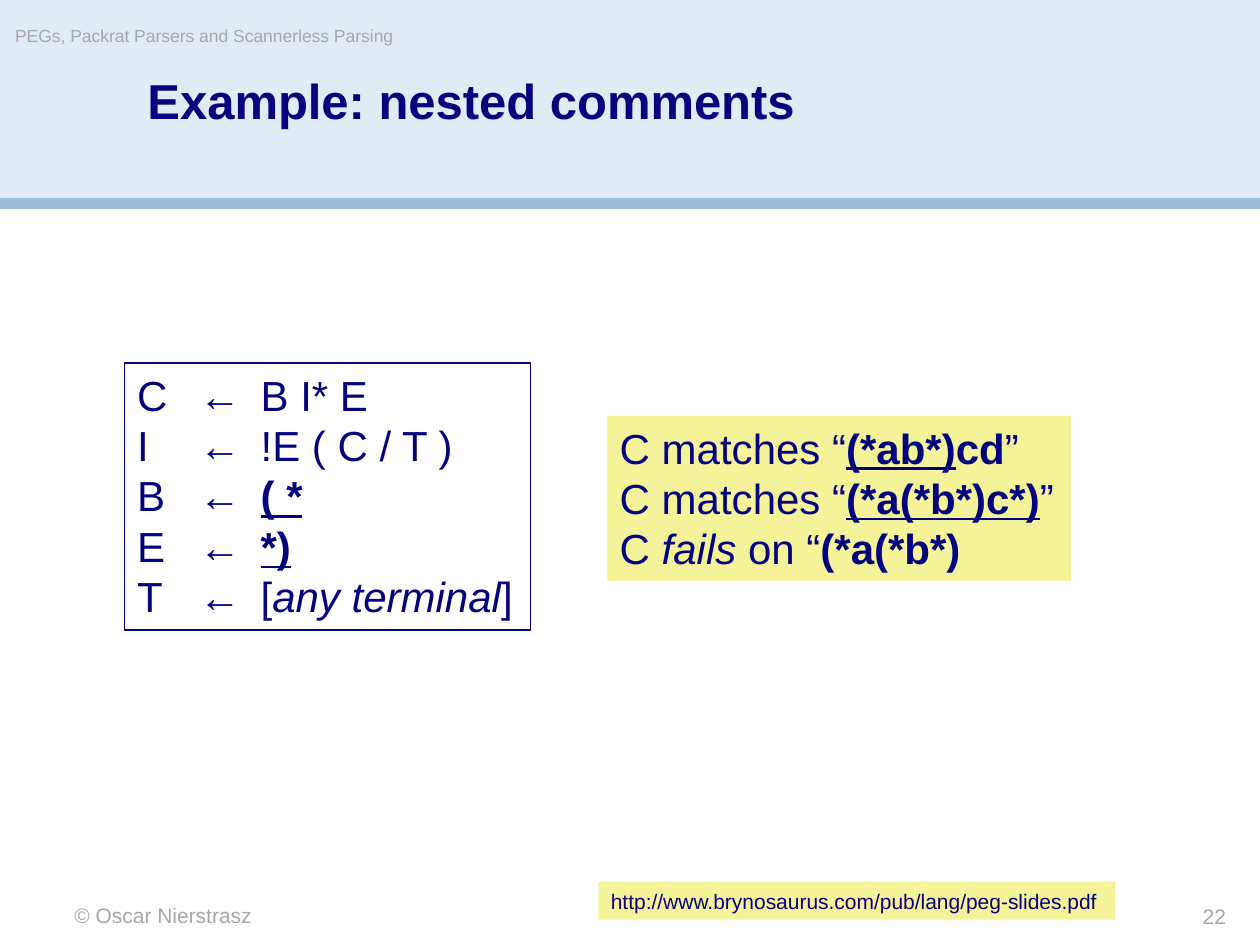
from dataclasses import dataclass

from lxml.etree import SubElement
from pptx import Presentation
from pptx.dml.color import RGBColor
from pptx.enum.shapes import MSO_SHAPE as Preset
from pptx.enum.text import MSO_ANCHOR as Anchor, MSO_AUTO_SIZE as AutoSize, PP_ALIGN as Align
from pptx.oxml.ns import qn
from pptx.util import Inches, Pt


@dataclass(frozen=True)
class Theme:
    font: str = "Arial"
    band: str = "E1EBF5"
    rule: str = "9CBDDE"
    note: str = "F5F399"
    ink: str = "05027D"
    heading: str = "0A017F"
    muted: str = "A7A7A7"
    title_size: int = 28
    code_size: int = 24
    small_size: int = 12
    header_size: int = 10


THEME = Theme()


@dataclass(frozen=True)
class Span:
    text: str
    bold: bool = False
    italic: bool = False
    underline: bool = False


@dataclass(frozen=True)
class Area:
    left: float
    top: float
    width: float
    height: float

    def lengths(self) -> tuple:
        return tuple(Inches(v) for v in (self.left, self.top, self.width, self.height))


@dataclass(frozen=True)
class TextBox:
    area: Area
    lines: tuple
    size: int
    color: str = THEME.ink
    fill: str = ""
    outline: str = ""
    align: Align = Align.LEFT
    tabs: tuple = ()
    framed: bool = True
    wrap: bool = False


def rgb(color: str) -> RGBColor:
    return RGBColor.from_string(color)


def style(font, size: int, color: str, span: Span) -> None:
    font.name, font.size = THEME.font, Pt(size)
    font.color.rgb = rgb(color)
    font.bold, font.italic, font.underline = span.bold, span.italic, span.underline


def clear_margins(frame) -> None:
    frame.margin_left = frame.margin_right = frame.margin_top = frame.margin_bottom = 0


def set_tabs(para, stops: tuple) -> None:
    tab_list = SubElement(para._p.get_or_add_pPr(), qn("a:tabLst"))
    for stop in stops:
        SubElement(tab_list, qn("a:tab"), pos=str(Inches(stop)), algn="l")


def draw_band(page, area: Area, color: str) -> None:
    band = page.shapes.add_shape(Preset.RECTANGLE, *area.lengths())
    band.shadow.inherit = False
    band.fill.solid()
    band.fill.fore_color.rgb = rgb(color)
    band.line.fill.background()


def draw_text(page, item: TextBox) -> None:
    box = page.shapes.add_textbox(*item.area.lengths())
    if item.fill:
        box.fill.solid()
        box.fill.fore_color.rgb = rgb(item.fill)
    if item.outline:
        box.line.color.rgb = rgb(item.outline)
        box.line.width = Pt(0.75)
    frame = box.text_frame
    frame.word_wrap = item.wrap
    if item.framed:
        frame.auto_size = AutoSize.SHAPE_TO_FIT_TEXT
    else:
        clear_margins(frame)
    for number, spans in enumerate(item.lines):
        para = frame.add_paragraph() if number else frame.paragraphs[0]
        para.alignment = item.align
        if item.tabs:
            set_tabs(para, item.tabs)
        for span in spans:
            run = para.add_run()
            run.text = span.text
            style(run.font, item.size, item.color, span)


def draw_title(page, area: Area, text: str) -> None:
    title = page.shapes.title
    title.left, title.top, title.width, title.height = area.lengths()
    frame = title.text_frame
    frame.text = text
    frame.vertical_anchor = Anchor.TOP
    frame.word_wrap = True
    clear_margins(frame)
    para = frame.paragraphs[0]
    para.alignment, para.line_spacing = Align.LEFT, 0.9
    style(para.runs[0].font, THEME.title_size, THEME.heading, Span(text, bold=True))


def rule_line(symbol: str, *body: Span) -> tuple:
    return (Span(f"{symbol}\t←\t"), *body)


GRAMMAR = (
    rule_line("C", Span("B I* E")),
    rule_line("I", Span("!E ( C / T )")),
    rule_line("B", Span("( *", bold=True, underline=True)),
    rule_line("E", Span("*)", bold=True, underline=True)),
    rule_line("T", Span("["), Span("any terminal", italic=True), Span("]")),
)

MATCHES = (
    (Span("C matches “"), Span("(*ab*)", bold=True, underline=True),
     Span("cd", bold=True), Span("”")),
    (Span("C matches “"), Span("(*a(*b*)c*)", bold=True, underline=True), Span("”")),
    (Span("C "), Span("fails", italic=True), Span(" on “"), Span("(*a(*b*)", bold=True)),
)

TEXTS = (
    TextBox(Area(0.59, 7.16, 4.17, 0.2), ((Span("© Oscar Nierstrasz"),),),
            THEME.small_size, THEME.muted, framed=False, wrap=True),
    TextBox(Area(0.12, 0.2, 5.9, 0.28),
            ((Span("PEGs, Packrat Parsers and Scannerless Parsing"),),),
            THEME.header_size, THEME.muted, framed=False),
    TextBox(Area(8.25, 7.17, 1.48, 0.2), ((Span("22"),),),
            THEME.small_size, THEME.muted, align=Align.RIGHT, framed=False, wrap=True),
    TextBox(Area(4.75, 7, 4.1, 0.3),
            ((Span("http://www.brynosaurus.com/pub/lang/peg-slides.pdf"),),),
            THEME.small_size, fill=THEME.note),
    TextBox(Area(0.99, 2.88, 3.22, 2.12), GRAMMAR, THEME.code_size,
            outline=THEME.ink, tabs=(0.49, 0.98)),
    TextBox(Area(4.82, 3.3, 3.68, 1.31), MATCHES, THEME.code_size, fill=THEME.note),
)


def main() -> None:
    """Build the nested comments slide and save it."""
    deck = Presentation()
    deck.slide_width, deck.slide_height = Inches(10), Inches(7.5)
    page = deck.slides.add_slide(deck.slide_layouts[5])
    draw_band(page, Area(0, 0, 10, 1.58), THEME.band)
    draw_band(page, Area(0, 1.57, 10, 0.09), THEME.rule)
    title = page.shapes.title
    page.shapes._spTree.append(title._element)
    draw_title(page, Area(1.17, 0.61, 8.83, 0.89), "Example: nested comments")
    for item in TEXTS:
        draw_text(page, item)
    deck.save("out.pptx")


if __name__ == "__main__":
    main()
